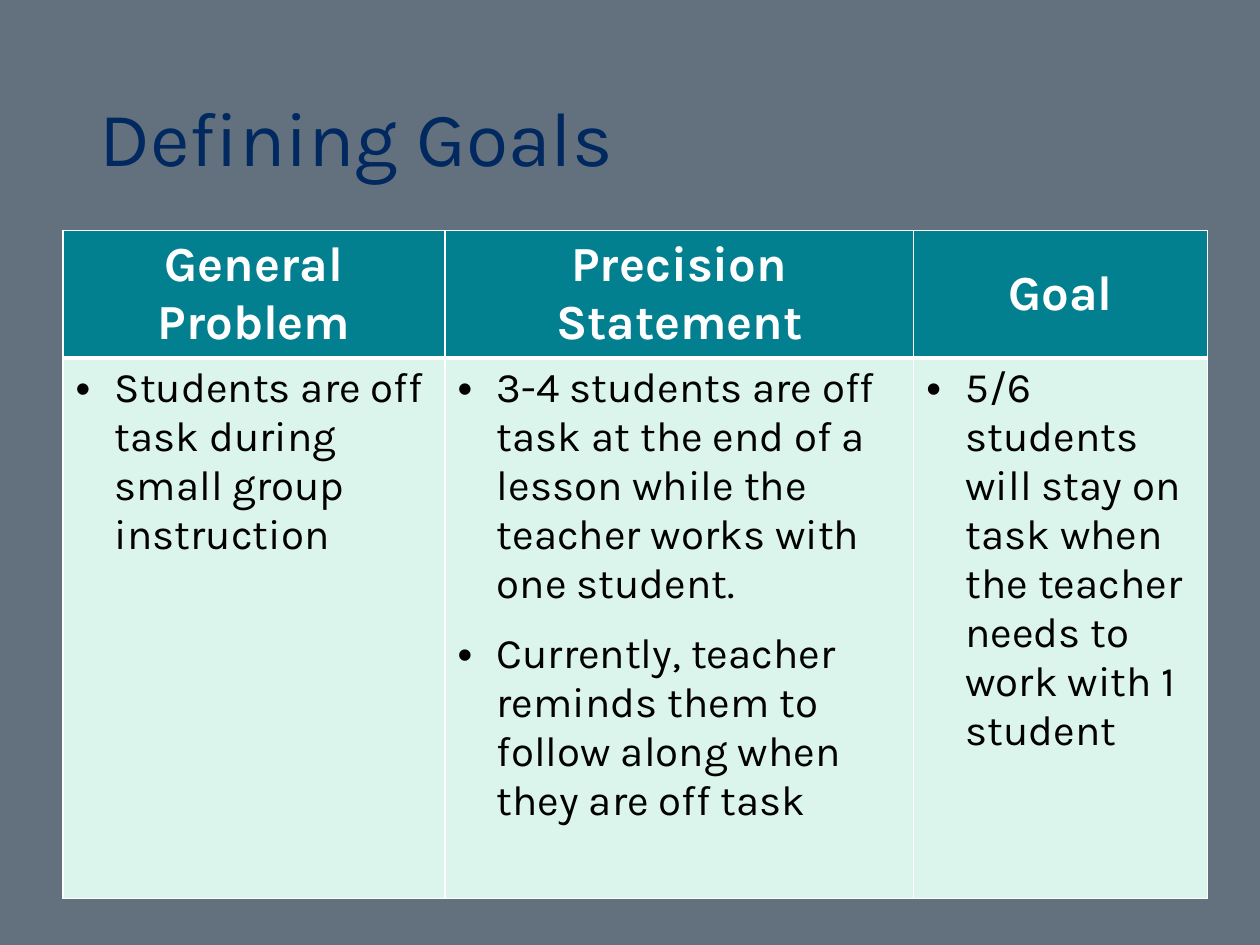
from dataclasses import dataclass

from lxml import etree
from pptx import Presentation
from pptx import util as u
from pptx.dml.color import RGBColor
from pptx.enum import text
from pptx.oxml import ns


@dataclass(frozen=True)
class Theme:
    font: str = "Karla"
    background: str = "63717F"
    title: str = "01295F"
    header_fill: str = "028090"
    header_text: str = "FFFFFF"
    body_fill: str = "DBF5ED"
    body_text: str = "000000"
    border: str = "FFFFFF"
    title_size: int = 44
    header_size: int = 28
    body_size: int = 24


HEADERS = ["General Problem", "Precision Statement", "Goal"]
BULLETS = [
    ["Students are off task during small group instruction"],
    ["3-4 students are off task at the end of a lesson while the teacher works with one student.",
     "Currently, teacher reminds them to follow along when they are off task"],
    ["5/6 students will stay on task when the teacher needs to work with 1 student"],
]
COLUMN_WIDTHS = [7.7, 9.45, 5.92]
ROW_HEIGHTS = [2.55, 10.9]


class SlideBuilder:
    def __init__(self, presentation, theme):
        self.theme = theme
        self.slide = presentation.slides.add_slide(presentation.slide_layouts[5])
        fill = self.slide.background.fill
        fill.solid()
        fill.fore_color.rgb = RGBColor.from_string(theme.background)

    def style(self, paragraph, size, color, bold=False):
        font = paragraph.font
        font.name, font.size, font.bold = self.theme.font, u.Pt(size), bold
        font.color.rgb = RGBColor.from_string(color)

    def title(self, wording, left, top, width, height):
        shape = self.slide.shapes.title
        shape.left, shape.top = u.Cm(left), u.Cm(top)
        shape.width, shape.height = u.Cm(width), u.Cm(height)
        frame = shape.text_frame
        frame.text = wording
        frame.auto_size = text.MSO_AUTO_SIZE.NONE
        frame.vertical_anchor = text.MSO_ANCHOR.MIDDLE
        paragraph = frame.paragraphs[0]
        paragraph.alignment = text.PP_ALIGN.LEFT
        paragraph.line_spacing = 0.9
        self.style(paragraph, self.theme.title_size, self.theme.title)

    def table(self, headers, bullets, left, top, widths, heights):
        frame = self.slide.shapes.add_table(
            2, len(headers), u.Cm(left), u.Cm(top), u.Cm(sum(widths)), u.Cm(sum(heights)))
        table = frame.table
        for column, width in zip(table.columns, widths):
            column.width = u.Cm(width)
        for row, height in zip(table.rows, heights):
            row.height = u.Cm(height)
        for index, (header, items) in enumerate(zip(headers, bullets)):
            self.header_cell(table.cell(0, index), header)
            self.bullet_cell(table.cell(1, index), items)

    def header_cell(self, cell, wording):
        self.paint(cell, self.theme.header_fill, top=1, bottom=3)
        cell.text = wording
        cell.vertical_anchor = text.MSO_ANCHOR.MIDDLE
        paragraph = cell.text_frame.paragraphs[0]
        paragraph.alignment = text.PP_ALIGN.CENTER
        self.style(paragraph, self.theme.header_size, self.theme.header_text, bold=True)

    def bullet_cell(self, cell, items):
        self.paint(cell, self.theme.body_fill, top=3, bottom=1)
        cell.text = "\n".join(items)
        for paragraph in cell.text_frame.paragraphs:
            paragraph.space_after = u.Pt(12)
            self.style(paragraph, self.theme.body_size, self.theme.body_text)
            self.bullet(paragraph)

    def bullet(self, paragraph):
        """Give the paragraph a round bullet with a hanging indent."""
        properties = paragraph._p.get_or_add_pPr()
        indent = u.Cm(0.79)
        properties.set("marL", str(indent))
        properties.set("indent", str(-indent))
        font = etree.Element(ns.qn("a:buFont"), typeface="Arial")
        mark = etree.Element(ns.qn("a:buChar"), char="•")
        run_defaults = properties.find(ns.qn("a:defRPr"))
        run_defaults.addprevious(font)
        run_defaults.addprevious(mark)

    def paint(self, cell, color, top, bottom):
        """Add the four borders, widths in points, and then the fill."""
        properties = cell._tc.get_or_add_tcPr()
        for side, width in (("L", 1), ("R", 1), ("T", top), ("B", bottom)):
            line = etree.SubElement(properties, ns.qn(f"a:ln{side}"), w=str(u.Pt(width)))
            solid = etree.SubElement(line, ns.qn("a:solidFill"))
            etree.SubElement(solid, ns.qn("a:srgbClr"), val=self.theme.border)
        cell.fill.solid()
        cell.fill.fore_color.rgb = RGBColor.from_string(color)


def main():
    presentation = Presentation()
    presentation.slide_width, presentation.slide_height = u.Cm(25.4), u.Cm(19.05)
    builder = SlideBuilder(presentation, Theme())
    builder.title("Defining Goals", 1.75, 1.02, 21.9, 3.68)
    builder.table(HEADERS, BULLETS, 1.27, 4.65, COLUMN_WIDTHS, ROW_HEIGHTS)
    presentation.save("out.pptx")


if __name__ == "__main__":
    main()
